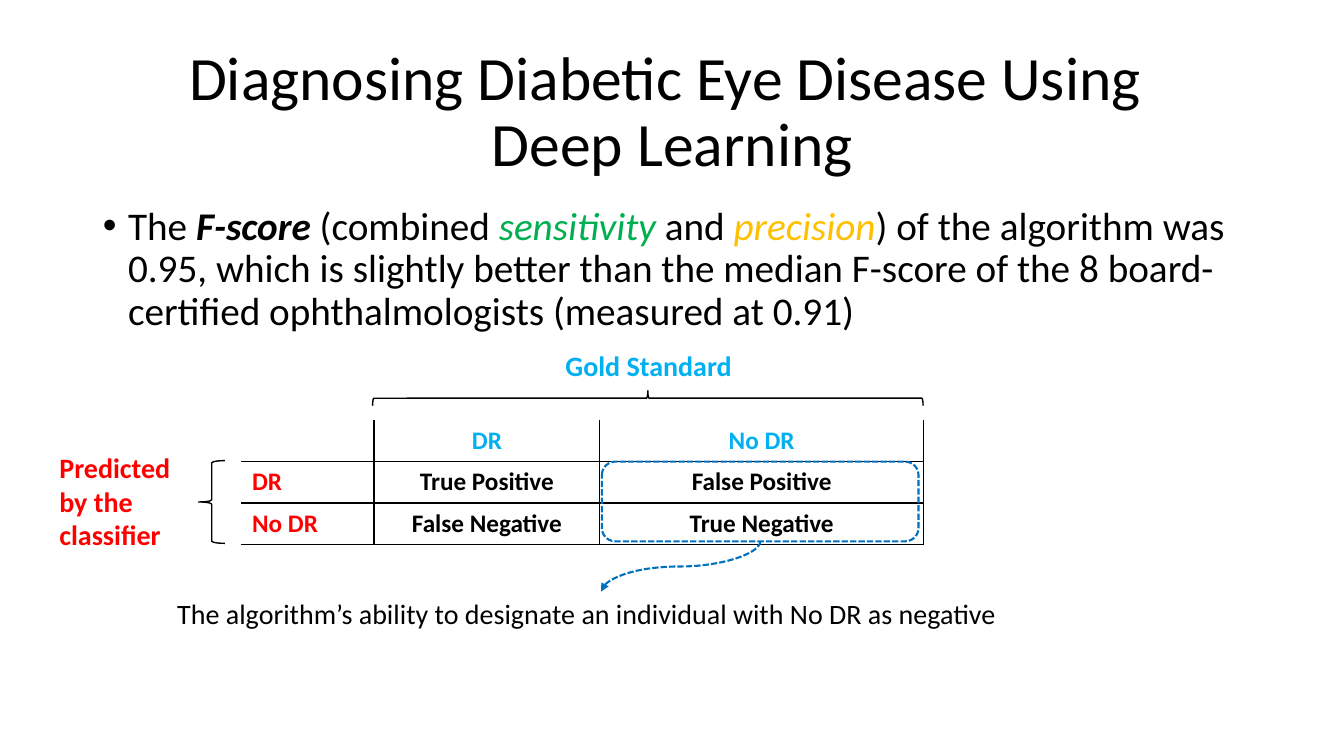
from lxml import etree
from pptx import Presentation
from pptx import util as u
from pptx.dml.color import RGBColor
from pptx.enum import dml, shapes, text
from pptx.oxml.ns import qn

BLACK = RGBColor(0x00, 0x00, 0x00)
WHITE = RGBColor(0xFF, 0xFF, 0xFF)
RED = RGBColor(0xFF, 0x00, 0x00)
SKY = RGBColor(0x00, 0xB0, 0xF0)
BLUE = RGBColor(0x00, 0x70, 0xC0)
GREEN = RGBColor(0x00, 0xB0, 0x50)
AMBER = RGBColor(0xFF, 0xC0, 0x00)
CENTER = text.PP_ALIGN.CENTER


def inches(*lengths):
    return [u.Inches(n) for n in lengths]


def write(p, words, size=20, color=BLACK, bold=False, italic=False, font="Calibri"):
    """Append words to paragraph p; a newline becomes a line break."""
    for i, line in enumerate(words.split("\n")):
        if i:
            p.add_line_break()
        r = p.add_run()
        r.text = line
        f = r.font
        f.name, f.size, f.bold, f.italic = font, u.Pt(size), bold, italic
        f.color.rgb = color


def set_borders(cell, colors):
    """Draw 1 pt cell borders; colors maps L, R, T, B to a colour."""
    tcPr = cell._tc.get_or_add_tcPr()
    for side, color in colors.items():
        ln = etree.SubElement(tcPr, qn(f"a:ln{side}"), w=str(u.Pt(1)))
        fill = etree.SubElement(ln, qn("a:solidFill"))
        etree.SubElement(fill, qn("a:srgbClr"), val=str(color))


class Slide:
    def __init__(self, prs):
        self.s = prs.slides.add_slide(prs.slide_layouts[1])

    def placeholder(self, index, box, anchor):
        sp = self.s.placeholders[index]
        sp.left, sp.top, sp.width, sp.height = inches(*box)
        tf = sp.text_frame
        tf.word_wrap = True
        tf.auto_size = text.MSO_AUTO_SIZE.NONE
        tf.vertical_anchor = anchor
        p = tf.paragraphs[0]
        p.line_spacing = 0.9
        return p

    def title(self, words, box):
        p = self.placeholder(0, box, text.MSO_ANCHOR.MIDDLE)
        p.alignment = CENTER
        write(p, words, size=44)

    def bullet(self, runs, box):
        p = self.placeholder(1, box, text.MSO_ANCHOR.TOP)
        p.space_before = u.Pt(10)
        pPr = p._p.get_or_add_pPr()
        pPr.set("marL", str(u.Inches(0.25)))
        pPr.set("indent", str(u.Inches(-0.25)))
        etree.SubElement(pPr, qn("a:buFont"), typeface="Arial")
        etree.SubElement(pPr, qn("a:buChar"), char="•")
        for words, style in runs:
            write(p, words, size=28, **style)

    def label(self, words, box, wrap=False, **style):
        tf = self.s.shapes.add_textbox(*inches(*box)).text_frame
        tf.word_wrap = wrap
        write(tf.paragraphs[0], words, **style)

    def outline(self, kind, box, color=BLACK, width=1, dash=None, rotation=0):
        sp = self.s.shapes.add_shape(kind, *inches(*box))
        sp.shadow.inherit = False
        sp.rotation = rotation
        sp.fill.background()
        self.stroke(sp.line, color, width, dash)

    def stroke(self, line, color, width, dash):
        line.color.rgb = color
        line.width = u.Pt(width)
        if dash:
            line.dash_style = dash

    def curved_arrow(self, start, end, color, width, dash):
        """Curve that leaves start downwards and reaches end from above."""
        (x1, y1), (x2, y2) = start, end
        cx, cy = (x1 + x2) / 2, (y1 + y2) / 2
        half_w, half_h = (y2 - y1) / 2, (x1 - x2) / 2
        c = self.s.shapes.add_connector(
            shapes.MSO_CONNECTOR.CURVE,
            *inches(cx - half_w, cy - half_h, cx + half_w, cy + half_h))
        self.stroke(c.line, color, width, dash)
        spPr = c._element.spPr
        spPr.find(qn("a:xfrm")).set("rot", str(90 * 60000))
        etree.SubElement(c.line._get_or_add_ln(), qn("a:tailEnd"), type="triangle")
        etree.SubElement(spPr, qn("a:effectLst"))

    def confusion_matrix(self, rows, left, top, widths, row_height):
        size = inches(left, top, sum(widths), row_height * len(rows))
        table = self.s.shapes.add_table(len(rows), len(widths), *size).table
        table.first_row = table.horz_banding = False
        for col, width in zip(table.columns, widths):
            col.width = u.Inches(width)
        for i, row in enumerate(rows):
            table.rows[i].height = u.Inches(row_height)
            for j, words in enumerate(row):
                cell = table.cell(i, j)
                set_borders(cell, {"L": BLACK if j else WHITE, "R": BLACK,
                                   "T": BLACK if i else WHITE, "B": BLACK})
                cell.fill.background()
                if not words:
                    continue
                p = cell.text_frame.paragraphs[0]
                if j:
                    p.alignment = CENTER
                color = SKY if i == 0 else RED if j == 0 else BLACK
                write(p, words, size=18, color=color, bold=True)


def main():
    prs = Presentation()
    prs.slide_width, prs.slide_height = inches(13.33, 7.5)
    s = Slide(prs)

    s.title("Diagnosing Diabetic Eye Disease Using \nDeep Learning",
            (0.92, 0.4, 11.5, 1.45))
    s.bullet([
        ("The ", {}),
        ("F-score", {"bold": True, "italic": True}),
        (" (combined ", {}),
        ("sensitivity", {"color": GREEN, "italic": True}),
        (" and ", {}),
        ("precision", {"color": AMBER, "italic": True}),
        (") of the algorithm was 0.95, which is slightly better than the median "
         "F-score of the 8 board-certified ophthalmologists (measured at 0.91)", {}),
    ], (0.92, 2, 11.5, 4.76))

    s.confusion_matrix([
        ["", "DR", "No DR"],
        ["DR", "True Positive", "False Positive"],
        ["No DR", "False Negative", "True Negative"],
    ], left=2.4, top=4.17, widths=(1.31, 2.24, 3.21), row_height=0.41)

    brace = shapes.MSO_SHAPE.LEFT_BRACE
    s.outline(brace, (1.97, 4.57, 0.26, 0.82))
    s.label("Predicted\nby the \nclassifier", (0.49, 4.42, 1.31, 1.11),
            color=RED, bold=True)
    s.outline(brace, (6.35, 1.22, 0.15, 5.46), rotation=90)
    s.label("Gold Standard", (5.51, 3.41, 1.87, 0.44), color=SKY, bold=True)

    dashed = {"color": BLUE, "width": 1.5, "dash": dml.MSO_LINE.SQUARE_DOT}
    s.outline(shapes.MSO_SHAPE.ROUNDED_RECTANGLE, (5.97, 4.58, 3.14, 0.79), **dashed)
    s.curved_arrow((7.54, 5.37), (5.96, 5.87), **dashed)
    s.label("The algorithm’s ability to designate an individual with No DR as negative",
            (1.66, 5.87, 8.6, 0.44), wrap=True)

    prs.save("out.pptx")


if __name__ == "__main__":
    main()
